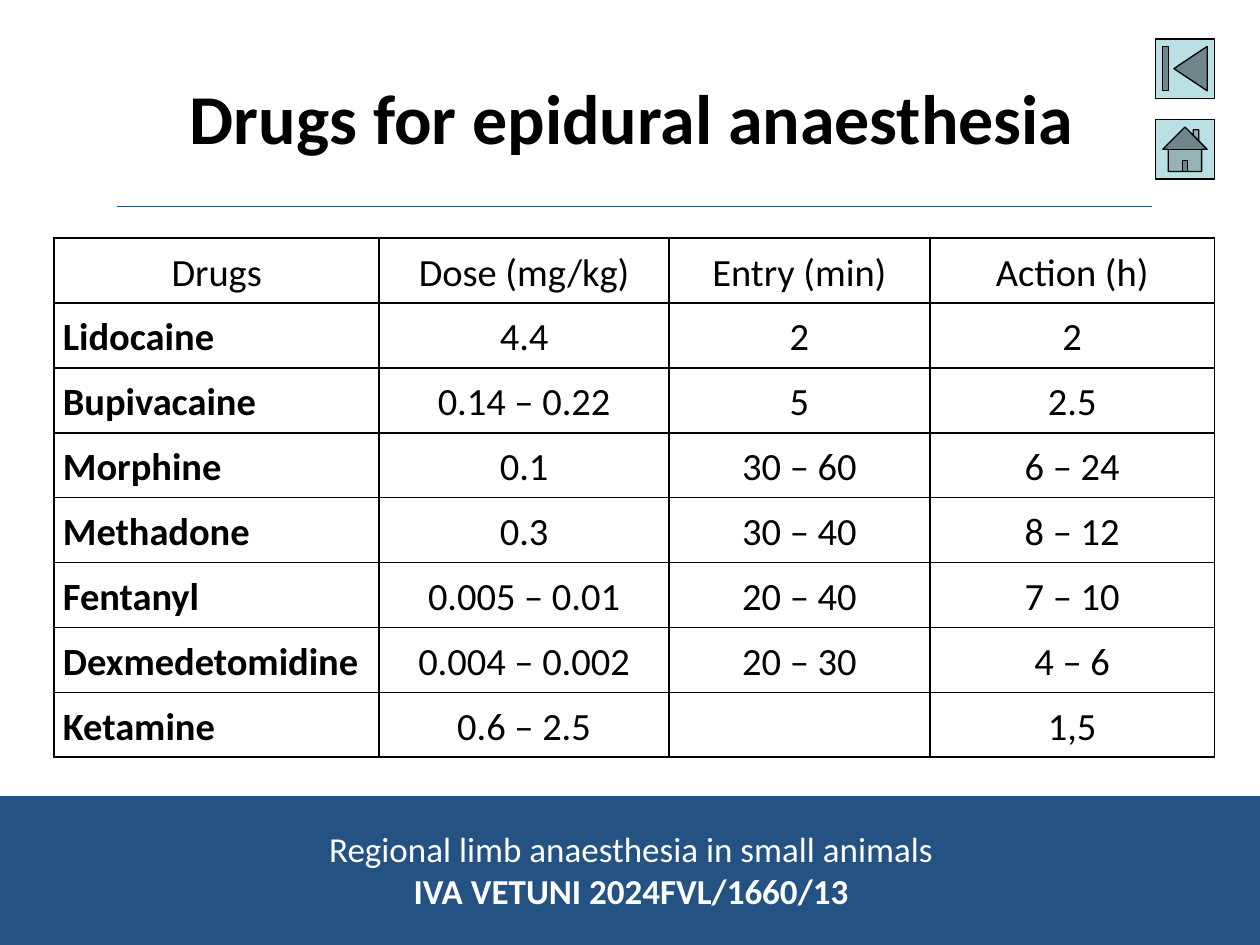
from dataclasses import dataclass

from lxml import etree
from pptx import Presentation
from pptx import util as u
from pptx.dml.color import RGBColor
from pptx.enum import shapes, text
from pptx.oxml import ns

COLORS = {"navy": "235283", "button": "BBE0E3", "white": "FFFFFF", "black": "000000"}
FONT = "Calibri"
WIDTH, HEIGHT = u.Inches(10), u.Inches(7.5)
COLUMN_WIDTHS = (2.58, 2.3, 2.07, 2.26)
ROW_HEIGHT = 0.515
ROWS = [
    ("Drugs", "Dose (mg/kg)", "Entry (min)", "Action (h)"),
    ("Lidocaine", "4.4", "2", "2"),
    ("Bupivacaine", "0.14 – 0.22", "5", "2.5"),
    ("Morphine", "0.1", "30 – 60", "6 – 24"),
    ("Methadone", "0.3", "30 – 40", "8 – 12"),
    ("Fentanyl", "0.005 – 0.01", "20 – 40", "7 – 10"),
    ("Dexmedetomidine", "0.004 – 0.002", "20 – 30", "4 – 6"),
    ("Ketamine", "0.6 – 2.5", "", "1,5"),
]


@dataclass
class Box:
    """A rectangle in shares of the slide's width and height."""
    left: float
    top: float
    width: float
    height: float

    def lengths(self) -> tuple[int, int, int, int]:
        return (int(self.left * WIDTH), int(self.top * HEIGHT),
                int(self.width * WIDTH), int(self.height * HEIGHT))


@dataclass
class Block:
    """A filled preset shape with a thin outline."""
    kind: shapes.MSO_SHAPE
    box: Box
    fill: str
    line: str


BUTTON_WIDTH, BUTTON_HEIGHT = 0.047, 0.047 * 10 / 7.5
BLOCKS = [
    Block(shapes.MSO_SHAPE.RECTANGLE, Box(0, 6.32 / 7.5, 1, 1.18 / 7.5), "navy", "navy"),
    Block(shapes.MSO_SHAPE.ACTION_BUTTON_BEGINNING,
          Box(0.917, 0.31 / 7.5, BUTTON_WIDTH, BUTTON_HEIGHT), "button", "black"),
    Block(shapes.MSO_SHAPE.ACTION_BUTTON_HOME,
          Box(0.917, 0.95 / 7.5, BUTTON_WIDTH, BUTTON_HEIGHT), "button", "black"),
]


def color(name: str) -> RGBColor:
    return RGBColor.from_string(COLORS[name])


def style(paragraph, size: float, color_name: str, bold: bool = False,
          align=text.PP_ALIGN.CENTER) -> None:
    paragraph.alignment = align
    font = paragraph.font
    font.name, font.size, font.bold = FONT, u.Pt(size), bold
    font.color.rgb = color(color_name)


def draw_block(slide, block: Block) -> None:
    shape = slide.shapes.add_shape(block.kind, *block.box.lengths())
    shape.shadow.inherit = False
    shape.fill.solid()
    shape.fill.fore_color.rgb = color(block.fill)
    shape.line.color.rgb = color(block.line)
    shape.line.width = u.Pt(0.75)


def draw_title(slide) -> None:
    title = slide.shapes.title
    title.left, title.top, title.width, title.height = Box(
        0.09, 0.04, 0.823, 1.25 / 7.5).lengths()
    title.text_frame.text = "Drugs for epidural anaesthesia"
    title.text_frame.vertical_anchor = text.MSO_ANCHOR.MIDDLE
    style(title.text_frame.paragraphs[0], 40, "black", bold=True)


def draw_rule(slide) -> None:
    y = u.Inches(1.64)
    rule = slide.shapes.add_connector(
        shapes.MSO_CONNECTOR.STRAIGHT, u.Inches(0.93), y, u.Inches(9.14), y)
    rule.line.color.rgb = color("navy")
    rule.line.width = u.Pt(0.75)
    etree.SubElement(rule._element.spPr, ns.qn("a:effectLst"))


def add_text_shadow(run) -> None:
    effects = etree.SubElement(run._r.get_or_add_rPr(), ns.qn("a:effectLst"))
    shadow = etree.SubElement(effects, ns.qn("a:outerShdw"), dist="38100", dir="2700000")
    etree.SubElement(shadow, ns.qn("a:srgbClr"), val=COLORS["black"])


def draw_footer(slide) -> None:
    footer = slide.shapes.add_textbox(*Box(0.234, 6.52 / 7.5, 0.534, 0.77 / 7.5).lengths())
    frame = footer.text_frame
    frame.word_wrap = False
    frame.auto_size = text.MSO_AUTO_SIZE.SHAPE_TO_FIT_TEXT
    frame.text = "Regional limb anaesthesia in small animals\nIVA VETUNI 2024FVL/1660/13"
    for index, paragraph in enumerate(frame.paragraphs):
        style(paragraph, 20, "white", bold=index == 1)
        add_text_shadow(paragraph.runs[0])


def add_borders(cell) -> None:
    properties = cell._tc.get_or_add_tcPr()
    for side in ("lnL", "lnR", "lnT", "lnB"):
        line = etree.SubElement(properties, ns.qn(f"a:{side}"), w=str(u.Pt(1)))
        fill = etree.SubElement(line, ns.qn("a:solidFill"))
        etree.SubElement(fill, ns.qn("a:srgbClr"), val=COLORS["black"])


def draw_cell(cell, value: str, is_drug: bool) -> None:
    add_borders(cell)
    cell.fill.solid()
    cell.fill.fore_color.rgb = color("white")
    cell.vertical_anchor = text.MSO_ANCHOR.MIDDLE
    cell.margin_left = cell.margin_right = u.Inches(0.07)
    cell.margin_top = cell.margin_bottom = 0
    cell.text = value
    paragraph = cell.text_frame.paragraphs[0]
    paragraph.line_spacing = 1.1
    paragraph.space_after = u.Pt(6)
    align = text.PP_ALIGN.JUSTIFY if is_drug else text.PP_ALIGN.CENTER
    style(paragraph, 22, "black", is_drug, align)


def draw_table(slide) -> None:
    table = slide.shapes.add_table(
        len(ROWS), len(COLUMN_WIDTHS), u.Inches(0.43), u.Inches(1.89),
        u.Inches(sum(COLUMN_WIDTHS)), u.Inches(ROW_HEIGHT * len(ROWS))).table
    table.first_row = table.horz_banding = False
    for column, width in zip(table.columns, COLUMN_WIDTHS):
        column.width = u.Inches(width)
    for row_index, values in enumerate(ROWS):
        table.rows[row_index].height = u.Inches(ROW_HEIGHT)
        for column_index, value in enumerate(values):
            draw_cell(table.cell(row_index, column_index), value,
                      is_drug=row_index > 0 and column_index == 0)


def main() -> None:
    presentation = Presentation()
    presentation.slide_width, presentation.slide_height = WIDTH, HEIGHT
    slide = presentation.slides.add_slide(presentation.slide_layouts[5])
    # Footer band and navigation buttons
    for block in BLOCKS:
        draw_block(slide, block)
    draw_footer(slide)
    # Heading
    draw_title(slide)
    draw_rule(slide)
    # Drug table
    draw_table(slide)
    presentation.save("out.pptx")


if __name__ == "__main__":
    main()
